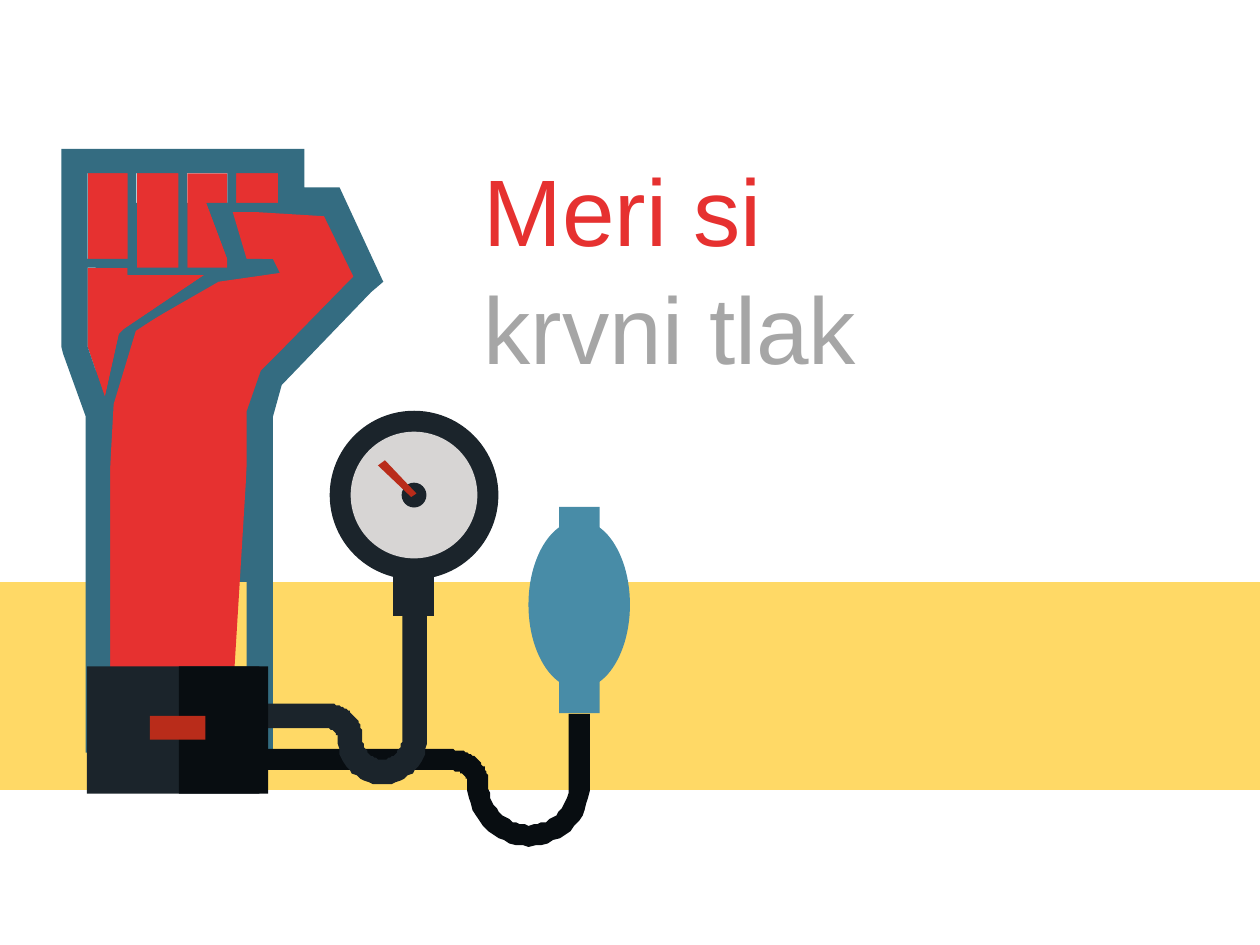
import math

import pptx
import pptx.dml.color
import pptx.enum.shapes
import pptx.util

Pt = pptx.util.Pt
RGB = pptx.dml.color.RGBColor
SHAPES = pptx.enum.shapes.MSO_SHAPE

TEAL = RGB(0x34, 0x6C, 0x81)
RED = RGB(0xE6, 0x31, 0x30)
YELLOW = RGB(0xFF, 0xD9, 0x66)
GREY = RGB(0xA6, 0xA6, 0xA6)
DIAL = RGB(0xD7, 0xD5, 0xD4)
BULB = RGB(0x48, 0x8C, 0xA7)
DARK = RGB(0x1B, 0x24, 0x2B)
BLACK = RGB(0x08, 0x0D, 0x11)
SIGNAL = RGB(0xB9, 0x2C, 0x1A)

FIST_OUTLINE = [
    (49, 429.8), (155.5, 429.8), (155.5, 237.6), (161.3, 220.3), (211.7, 167),
    (218.9, 160.6), (193.7, 106.6), (173.5, 106.6), (173.5, 85), (35.3, 85),
    (35.3, 198), (36, 202.3), (49, 237.6)]
FIST_PARTS = [
    # Heel of the palm
    [(49.7, 152.6), (73.4, 152.6), (73.4, 157), (117.4, 157), (70.6, 187.9),
     (68.4, 190.8), (60.5, 226.8), (49.7, 198)],
    # Four fingers, from the little finger to the index finger
    [(49.7, 99.4), (73.4, 99.4), (73.4, 147.6), (49.7, 147.6)],
    [(78.5, 99.4), (102.2, 99.4), (102.2, 152.6), (78.5, 152.6)],
    [(107.3, 99.4), (130.3, 99.4), (130.3, 115.9), (118.1, 115.9),
     (130.3, 148.3), (130.3, 152.6), (107.3, 152.6)],
    [(135.4, 99.4), (159.1, 99.4), (159.1, 115.9), (135.4, 115.9)]]
THUMB_AND_ARM = [
    (133.2, 121), (141.1, 148.3), (156.2, 148.3), (159.8, 155.5),
    (124.6, 161.3), (77.8, 187.9), (64.8, 231.1), (54.7, 411.1),
    (132.5, 415.4), (142.6, 235.4), (151.9, 213.1), (207.4, 161.3),
    (192.2, 123.8), (143.3, 121)]
ARM_OPENING = [
    (201.6, 157.7), (157, 203.8), (149, 212.4), (141.1, 234.7),
    (141.1, 415.4), (63.4, 415.4), (63.4, 234.7), (73.4, 191.5), (118.8, 162),
    (153.4, 153.4), (149.8, 147.6), (134.6, 147.6), (130.3, 135.4),
    (124.6, 121), (184.3, 121)]
NEEDLE = [(234.7, 284.4), (216, 266.4), (220.3, 262.8), (238.3, 281.5)]


def paint(shape, color):
    shape.shadow.inherit = False
    shape.fill.solid()
    shape.fill.fore_color.rgb = color
    shape.line.fill.background()


def add_preset(page, kind, left, top, width, height, color):
    shape = page.shapes.add_shape(kind, Pt(left), Pt(top), Pt(width), Pt(height))
    paint(shape, color)


def add_circle(page, center_x, center_y, radius, color):
    add_preset(page, SHAPES.OVAL, center_x - radius, center_y - radius,
               2 * radius, 2 * radius, color)


def add_outline(page, contours, color):
    """Draw the first contour filled; any further contours are holes in it."""
    builder = page.shapes.build_freeform(*contours[0][0], scale=Pt(1))
    for index, contour in enumerate(contours):
        if index:
            builder.move_to(*contour[0])
        builder.add_line_segments(contour[1:], close=True)
    paint(builder.convert_to_shape(), color)


def arc(center_x, center_y, radius, start, end, steps=30):
    angles = [math.radians(start + (end - start) * step / steps)
              for step in range(steps + 1)]
    return [(round(center_x + radius * math.cos(angle), 2),
             round(center_y + radius * math.sin(angle), 2)) for angle in angles]


def add_hose(page, start, bend_x, bend, loop, top, width, color):
    """Run right from start, bend down, loop under and rise to top."""
    left, y = start

    def side(offset):
        loop_x = bend_x + bend + loop
        return ([(left, y - offset)]
                + arc(bend_x, y + bend, bend + offset, -90, 0)
                + arc(loop_x, y + bend, loop - offset, 180, 0)
                + [(loop_x + loop - offset, top)])

    add_outline(page, [side(width / 2) + side(-width / 2)[::-1]], color)


def add_text(page, lines, left, top, width, height, *, font, size, spacing):
    """Put coloured lines into one paragraph, parted by line breaks."""
    box = page.shapes.add_textbox(Pt(left), Pt(top), Pt(width), Pt(height))
    box.text_frame.word_wrap = True
    para = box.text_frame.paragraphs[0]
    para.line_spacing = spacing
    for index, (text, color) in enumerate(lines):
        if index:
            para.add_line_break()
        span = para.add_run()
        span.text = text
        span.font.name = font
        span.font.size = Pt(size)
        span.font.color.rgb = color


def add_fist(page):
    add_preset(page, SHAPES.RECTANGLE, 63.4, 115.9, 133.9, 55.4, TEAL)
    for part in FIST_PARTS + [THUMB_AND_ARM]:
        add_outline(page, [part], RED)
    add_outline(page, [FIST_OUTLINE, *FIST_PARTS, ARM_OPENING], TEAL)


def add_bulb(page):
    add_preset(page, SHAPES.OVAL, 302, 297.4, 58, 96.2, BULB)
    add_preset(page, SHAPES.RECTANGLE, 319.5, 289.6, 23.2, 118, BULB)


def add_gauge(page):
    add_preset(page, SHAPES.RECTANGLE, 224.7, 325, 23.3, 27, DARK)
    for radius, color in ((48.2, DARK), (36.2, DIAL), (7.1, DARK)):
        add_circle(page, 236.6, 282.9, radius, color)


def add_cuff(page):
    add_preset(page, SHAPES.RECTANGLE, 49.7, 380.8, 98.6, 72.8, DARK)
    add_preset(page, SHAPES.RECTANGLE, 102.2, 380.8, 51, 72.8, BLACK)


def main():
    deck = pptx.Presentation()
    deck.slide_width, deck.slide_height = Pt(720), Pt(540)
    page = deck.slides.add_slide(deck.slide_layouts[6])

    add_preset(page, SHAPES.RECTANGLE, 54.7, 152.6, 92.2, 219.6, TEAL)
    add_preset(page, SHAPES.RECTANGLE, 0, 332.6, 720, 118.8, YELLOW)
    add_text(page, [("Meri si", RED), ("krvni tlak", GREY)],
             269.3, 81, 444.2, 138.2, font="Arial", size=54, spacing=1.04)
    add_fist(page)
    add_bulb(page)
    add_hose(page, (149.8, 434.5), 259.2, 14, 29, 407.5, 12, BLACK)
    add_hose(page, (144, 409), 186.5, 13.7, 18.3, 352, 14.4, DARK)
    add_gauge(page)
    add_cuff(page)
    add_outline(page, [NEEDLE], SIGNAL)
    add_preset(page, SHAPES.RECTANGLE, 85.7, 409, 31.7, 13.7, SIGNAL)

    deck.save("out.pptx")


if __name__ == "__main__":
    main()
